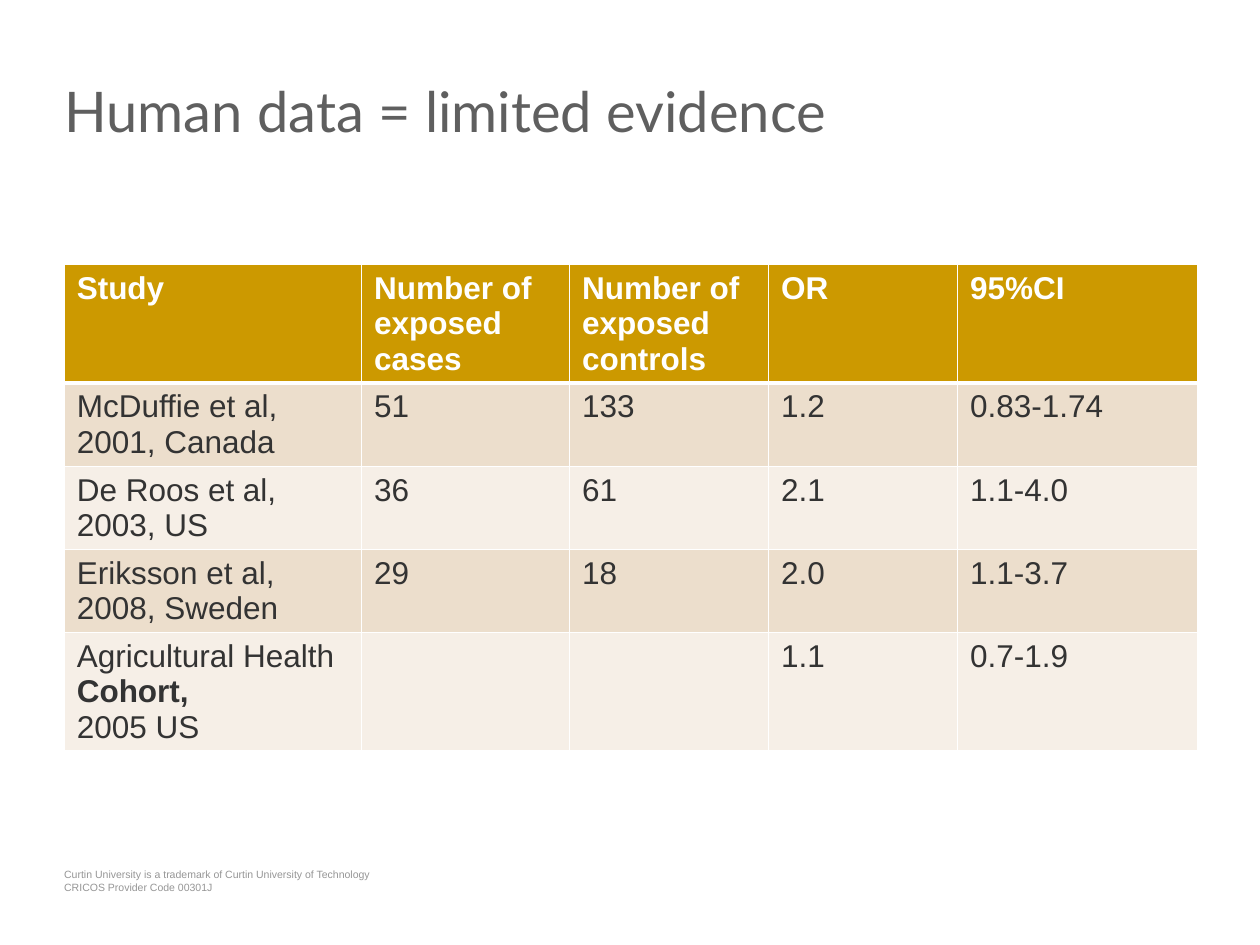
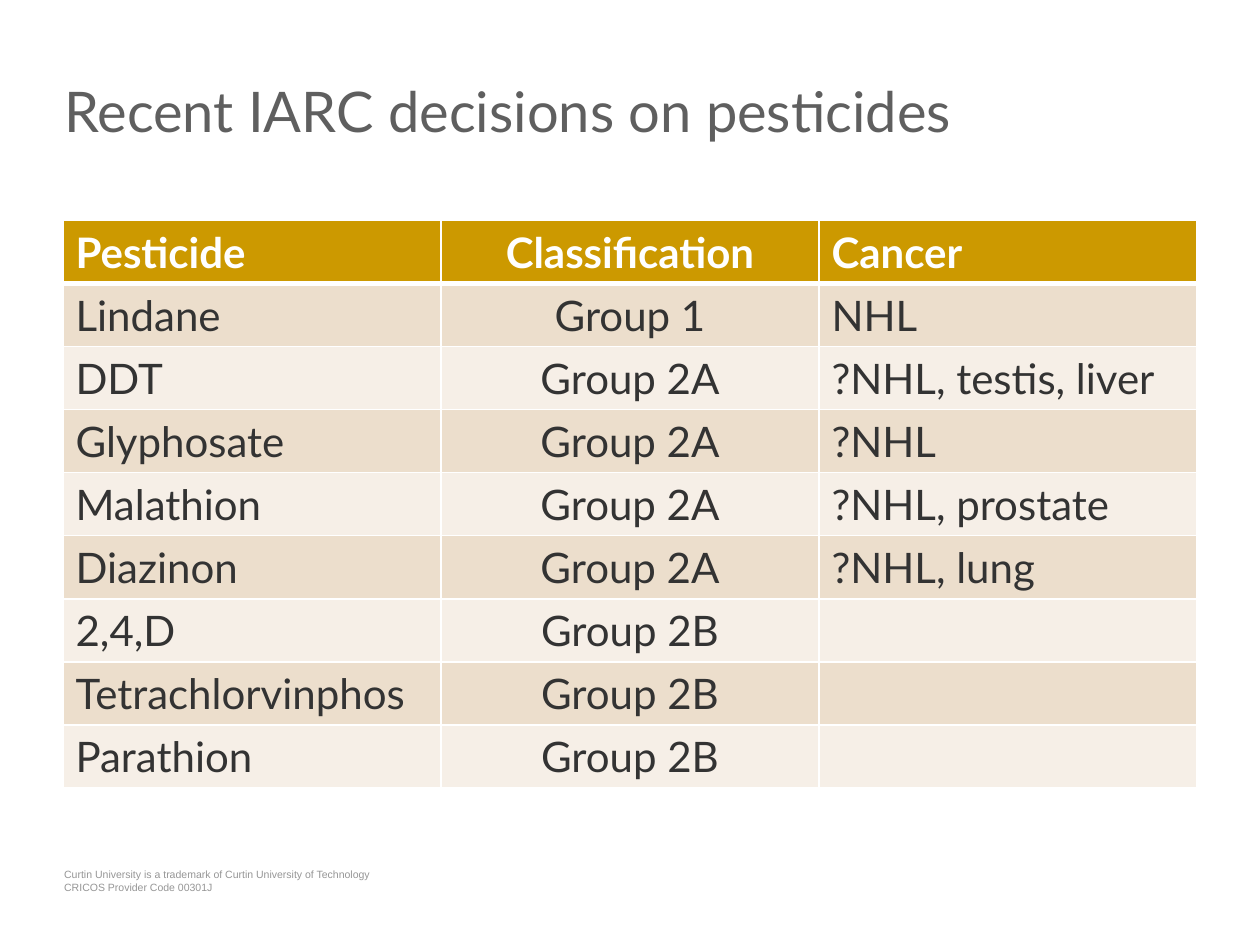
from lxml import etree
from pptx import Presentation
from pptx.dml.color import RGBColor
from pptx.enum import text
from pptx.oxml import ns
from pptx.util import Inches, Pt

WHITE = RGBColor(0xFF, 0xFF, 0xFF)
GOLD = RGBColor(0xCC, 0x99, 0x00)
SAND = RGBColor(0xEC, 0xDE, 0xCC)
CREAM = RGBColor(0xF6, 0xEF, 0xE7)
TITLE_GREY = RGBColor(0x5F, 0x5F, 0x5F)
FOOTER_GREY = RGBColor(0x96, 0x96, 0x96)
BODY_GREY = RGBColor(0x33, 0x33, 0x33)

LEFT, CENTER = text.PP_ALIGN.LEFT, text.PP_ALIGN.CENTER
FOOTER = ("Curtin University is a trademark of Curtin University of Technology\n"
          "CRICOS Provider Code 00301J")

STUDIES = [
    ["Study", "Number of exposed cases", "Number of exposed controls", "OR", "95%CI"],
    ["McDuffie et al, 2001, Canada", "51", "133", "1.2", "0.83-1.74"],
    ["De Roos et al, 2003, US", "36", "61", "2.1", "1.1-4.0"],
    ["Eriksson et al,\n2008, Sweden", "29", "18", "2.0", "1.1-3.7"],
    ["Agricultural Health *Cohort,*\n2005 US", "", "", "1.1", "0.7-1.9"],
]
PESTICIDES = [
    ["Pesticide", "Classification", "Cancer"],
    ["Lindane", "Group 1", "NHL"],
    ["DDT", "Group 2A", "?NHL, testis, liver"],
    ["Glyphosate", "Group 2A", "?NHL"],
    ["Malathion", "Group 2A", "?NHL, prostate"],
    ["Diazinon", "Group 2A", "?NHL, lung"],
    ["2,4,D", "Group 2B", ""],
    ["Tetrachlorvinphos", "Group 2B", ""],
    ["Parathion", "Group 2B", ""],
]


def write_text(frame, content, *, font, size, color, bold=False, align=LEFT):
    """Write one paragraph per line; words between asterisks are bold."""
    for number, line in enumerate(content.split("\n")):
        paragraph = frame.paragraphs[0] if number == 0 else frame.add_paragraph()
        paragraph.alignment = align
        for part, words in enumerate(line.split("*")):
            if words:
                run = paragraph.add_run()
                run.text = words
                run.font.name = font
                run.font.size = Pt(size)
                run.font.color.rgb = color
                run.font.bold = bold or part % 2 == 1


def set_borders(cell, color, **widths):
    properties = cell._tc.get_or_add_tcPr()
    for position, side in enumerate("LRTB"):
        line = etree.Element(ns.qn(f"a:ln{side}"), w=str(Pt(widths.get(side, 1))))
        fill = etree.SubElement(line, ns.qn("a:solidFill"))
        etree.SubElement(fill, ns.qn("a:srgbClr"), val=str(color))
        properties.insert(position, line)


class Deck:
    title_font = "Lato"
    footer_font = "Arial"

    def __init__(self):
        self.presentation = Presentation()
        self.presentation.slide_width = Inches(10)
        self.presentation.slide_height = Inches(7.5)
        self.slide = None

    def clear_margins(self, frame):
        frame.margin_left = frame.margin_right = 0
        frame.margin_top = frame.margin_bottom = 0
        frame.vertical_anchor = text.MSO_ANCHOR.TOP
        frame.auto_size = text.MSO_AUTO_SIZE.NONE

    def add_slide(self, title):
        layout = self.presentation.slide_layouts.get_by_name("Title Only")
        self.slide = self.presentation.slides.add_slide(layout)
        self.slide.background.fill.solid()
        self.slide.background.fill.fore_color.rgb = WHITE
        self.add_footer()
        self.add_title(title)

    def add_footer(self):
        box = self.slide.shapes.add_textbox(
            Inches(0.51), Inches(6.89), Inches(3.07), Inches(0.24))
        self.clear_margins(box.text_frame)
        box.text_frame.word_wrap = False
        write_text(box.text_frame, FOOTER, font=self.footer_font, size=6,
                   color=FOOTER_GREY)

    def add_title(self, title):
        shape = self.slide.shapes.title
        shape.left, shape.top = Inches(0.51), Inches(0.61)
        shape.width, shape.height = Inches(8.98), Inches(1.09)
        self.clear_margins(shape.text_frame)
        write_text(shape.text_frame, title, font=self.title_font, size=32,
                   color=TITLE_GREY)

    def add_table(self, rows, left, top, widths, heights, font, size, centered=()):
        table = self.slide.shapes.add_table(
            len(rows), len(widths), Inches(left), Inches(top),
            Inches(sum(widths)), Inches(sum(heights))).table
        for column, width in zip(table.columns, widths):
            column.width = Inches(width)
        for row, height in zip(table.rows, heights):
            row.height = Inches(height)
        for r, values in enumerate(rows):
            header = r == 0
            for c, value in enumerate(values):
                cell = table.cell(r, c)
                cell.fill.solid()
                cell.fill.fore_color.rgb = GOLD if header else (CREAM, SAND)[r % 2]
                set_borders(cell, WHITE, T=3 if r == 1 else 1, B=3 if header else 1)
                write_text(cell.text_frame, value, font=font, size=size, bold=header,
                           color=WHITE if header else BODY_GREY,
                           align=CENTER if c in centered else LEFT)


def main():
    deck = Deck()
    deck.add_slide("Human data = limited evidence")
    deck.add_table(STUDIES, 0.51, 2.1, [2.36, 1.65, 1.58, 1.5, 1.91],
                   [0.94, 0.66, 0.66, 0.66, 0.94], font="Arial", size=18)
    deck.add_slide("Recent IARC decisions on pesticides")
    deck.add_table(PESTICIDES, 0.5, 1.75, [3] * 3, [0.5] * len(PESTICIDES),
                   font="Lato", size=24, centered=[1])
    deck.presentation.save("out.pptx")


if __name__ == "__main__":
    main()
